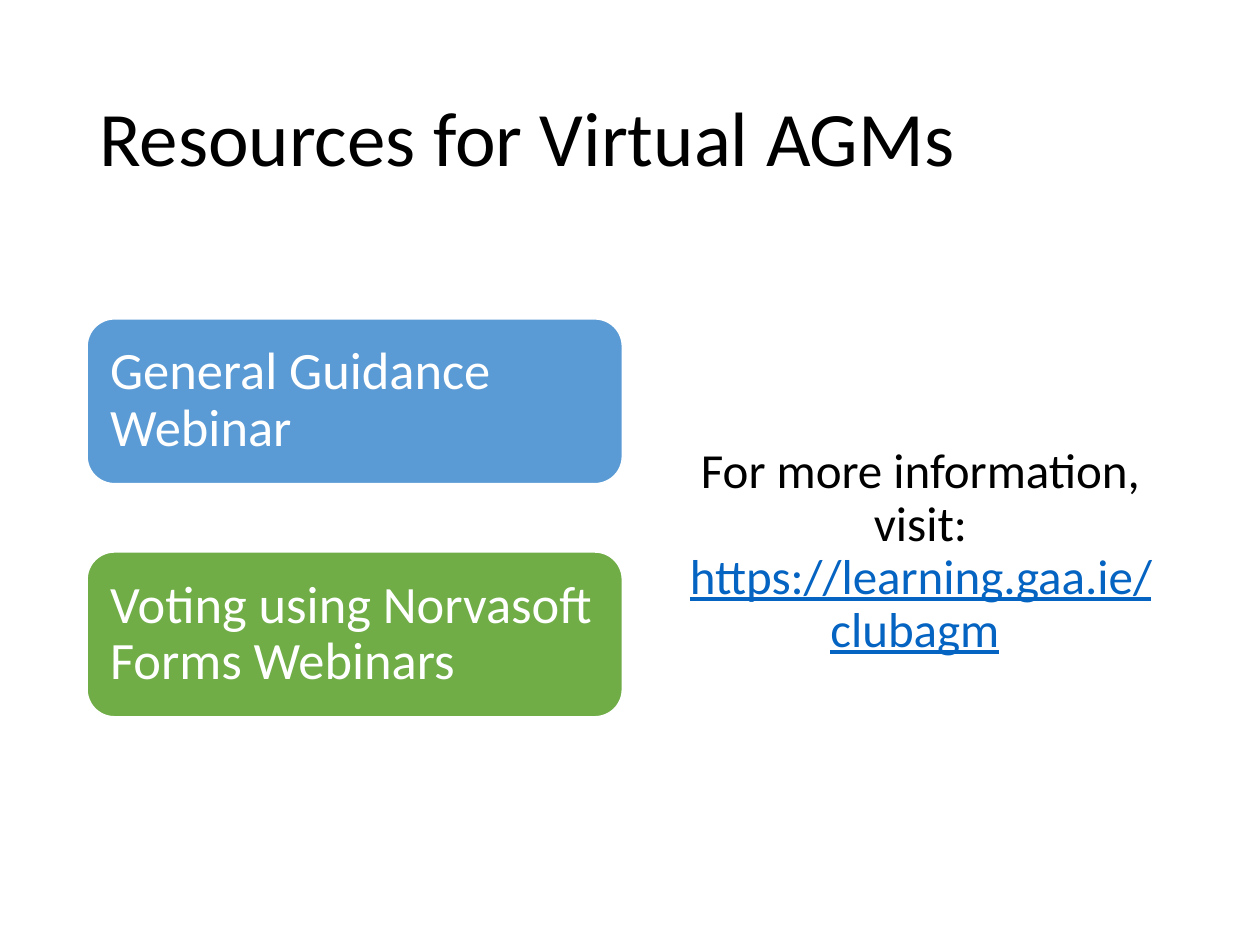
from dataclasses import dataclass
from typing import Any

from pptx import Presentation
from pptx.dml.color import RGBColor
from pptx.enum.shapes import MSO_SHAPE as Shape
from pptx.enum.text import MSO_ANCHOR as Anchor, PP_ALIGN as Align
from pptx.util import Inches, Pt

WIDTH, HEIGHT = Inches(10), Inches(7.5)
COLORS = {"text": "000000", "paper": "FFFFFF", "link": "0563C1",
          "blue": "5B9BD5", "green": "70AD47"}
MARGIN = 0.069
CARD_TOP, CARD_PITCH = 2.53 / 7.5, 1.85 / 7.5
CARD_WIDTH, CARD_HEIGHT = 0.425, 1.31 / 7.5


@dataclass(frozen=True)
class Area:
    """Position and size as shares of the slide."""
    left: float
    top: float
    width: float
    height: float

    def lengths(self) -> tuple[int, int, int, int]:
        """Return the area in slide units."""
        return (round(self.left * WIDTH), round(self.top * HEIGHT),
                round(self.width * WIDTH), round(self.height * HEIGHT))


@dataclass(frozen=True)
class Part:
    """A run of text with its colour."""
    text: str
    color: str = "text"
    underline: bool = False


@dataclass(frozen=True)
class Card:
    """A filled card naming one resource."""
    text: str
    fill: str


CARDS = (Card("General Guidance Webinar", "blue"),
         Card("Voting using Norvasoft Forms Webinars", "green"))
VISIT = (Part("For more information, visit: "),
         Part("https://learning.gaa.ie/clubagm", "link", True),
         Part(" "))


def rgb(name: str) -> RGBColor:
    """Look up a named colour."""
    return RGBColor.from_string(COLORS[name])


def apply(target: Any, values: dict[str, Any]) -> None:
    """Set each format value on the target."""
    for name, value in values.items():
        setattr(target, name, value)


def write(shape: Any, parts: tuple[Part, ...], size: float,
          align: Align = Align.LEFT) -> None:
    """Fill a shape with one vertically centred paragraph."""
    frame = shape.text_frame
    apply(frame, {"word_wrap": True, "vertical_anchor": Anchor.MIDDLE})
    paragraph = frame.paragraphs[0]
    apply(paragraph, {"alignment": align, "line_spacing": 0.9})
    for part in parts:
        run = paragraph.add_run()
        run.text = part.text
        apply(run.font, {"name": "Calibri", "size": Pt(size),
                         "underline": part.underline})
        run.font.color.rgb = rgb(part.color)


def add_text(slide: Any, area: Area, parts: tuple[Part, ...], size: float,
             align: Align = Align.LEFT) -> None:
    """Add a text box."""
    write(slide.shapes.add_textbox(*area.lengths()), parts, size, align)


def add_card(slide: Any, row: int, card: Card) -> None:
    """Add a rounded card on its row."""
    area = Area(MARGIN, CARD_TOP + row * CARD_PITCH, CARD_WIDTH, CARD_HEIGHT)
    shape = slide.shapes.add_shape(Shape.ROUNDED_RECTANGLE, *area.lengths())
    shape.shadow.inherit = False
    shape.fill.solid()
    shape.fill.fore_color.rgb = rgb(card.fill)
    shape.line.color.rgb = rgb("paper")
    shape.line.width = Pt(1)
    sides = ("left", "top", "right", "bottom")
    apply(shape.text_frame, {f"margin_{side}": Inches(0.12) for side in sides})
    write(shape, (Part(card.text, "paper"),), 30)


def main() -> None:
    """Build and save the resources slide."""
    presentation = Presentation()
    apply(presentation, {"slide_width": WIDTH, "slide_height": HEIGHT})
    slide = presentation.slides.add_slide(presentation.slide_layouts[6])
    add_text(slide, Area(MARGIN, 0.4 / 7.5, 1 - 2 * MARGIN, 1.45 / 7.5),
             (Part("Resources for Virtual AGMs"),), 44)
    for row, card in enumerate(CARDS):
        add_card(slide, row, card)
    add_text(slide, Area(0.53, 2 / 7.5, 0.47 - MARGIN, 4.76 / 7.5),
             VISIT, 28, Align.CENTER)
    presentation.save("out.pptx")


if __name__ == "__main__":
    main()
